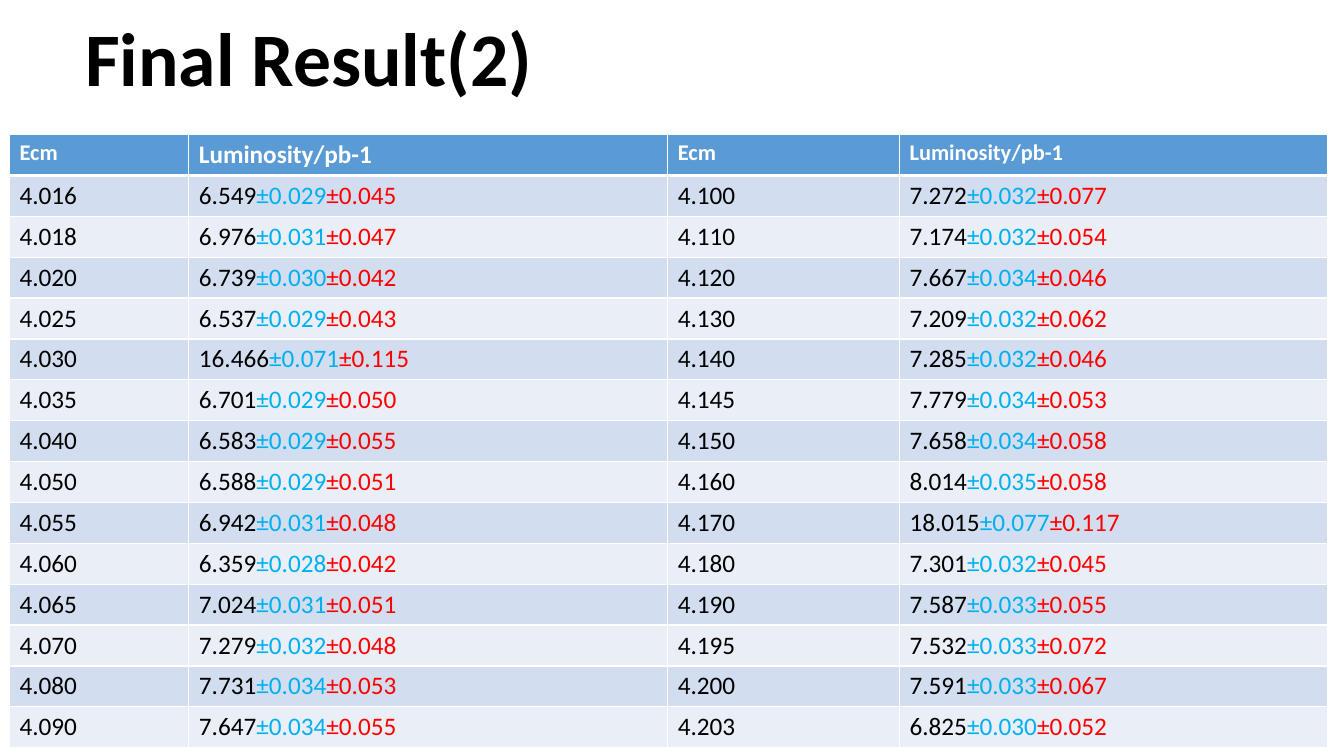
from lxml import etree
from pptx import Presentation
from pptx.dml.color import RGBColor
from pptx.enum.text import MSO_ANCHOR
from pptx.oxml.ns import qn
from pptx.util import Cm, Pt

MIDDLE = MSO_ANCHOR.MIDDLE

TITLE = "Final Result(2)"
HEADERS = [("Ecm", 16), ("Luminosity/pb-1", 18), ("Ecm", 16), ("Luminosity/pb-1", 16)]
LEFT_HALF = [
    ("4.016", "6.549", "±0.029", "±0.045"),
    ("4.018", "6.976", "±0.031", "±0.047"),
    ("4.020", "6.739", "±0.030", "±0.042"),
    ("4.025", "6.537", "±0.029", "±0.043"),
    ("4.030", "16.466", "±0.071", "±0.115"),
    ("4.035", "6.701", "±0.029", "±0.050"),
    ("4.040", "6.583", "±0.029", "±0.055"),
    ("4.050", "6.588", "±0.029", "±0.051"),
    ("4.055", "6.942", "±0.031", "±0.048"),
    ("4.060", "6.359", "±0.028", "±0.042"),
    ("4.065", "7.024", "±0.031", "±0.051"),
    ("4.070", "7.279", "±0.032", "±0.048"),
    ("4.080", "7.731", "±0.034", "±0.053"),
    ("4.090", "7.647", "±0.034", "±0.055"),
]
RIGHT_HALF = [
    ("4.100", "7.272", "±0.032", "±0.077"),
    ("4.110", "7.174", "±0.032", "±0.054"),
    ("4.120", "7.667", "±0.034", "±0.046"),
    ("4.130", "7.209", "±0.032", "±0.062"),
    ("4.140", "7.285", "±0.032", "±0.046"),
    ("4.145", "7.779", "±0.034", "±0.053"),
    ("4.150", "7.658", "±0.034", "±0.058"),
    ("4.160", "8.014", "±0.035", "±0.058"),
    ("4.170", "18.015", "±0.077", "±0.117"),
    ("4.180", "7.301", "±0.032", "±0.045"),
    ("4.190", "7.587", "±0.033", "±0.055"),
    ("4.195", "7.532", "±0.033", "±0.072"),
    ("4.200", "7.591", "±0.033", "±0.067"),
    ("4.203", "6.825", "±0.030", "±0.052"),
]
COLUMN_WIDTHS = [4.52, 12.07, 5.84, 10.8]
ROW_HEIGHT = 1.03
BLACK, WHITE, CYAN, RED = "000000", "FFFFFF", "00B0F0", "FF0000"
HEADER_FILL = "5B9BD5"
BAND_FILLS = ["D2DEEF", "EAEFF7"]


def color(hex_string):
    return RGBColor.from_string(hex_string)


def write(para, parts, size, bold=False):
    for text, hex_string in parts:
        span = para.add_run()
        span.text = text
        span.font.name = "Calibri"
        span.font.size = Pt(size)
        span.font.bold = bold
        span.font.color.rgb = color(hex_string)


def style_cell(cell, fill, top, bottom):
    properties = cell._tc.get_or_add_tcPr()
    for side, points in (("L", 1), ("R", 1), ("T", top), ("B", bottom)):
        line = etree.SubElement(properties, qn(f"a:ln{side}"), w=str(Pt(points)))
        solid = etree.SubElement(line, qn("a:solidFill"))
        etree.SubElement(solid, qn("a:srgbClr"), val=WHITE)
    cell.fill.solid()
    cell.fill.fore_color.rgb = color(fill)


def add_title(page):
    box = page.shapes.add_textbox(Cm(1.9), Cm(0.18), Cm(29.21), Cm(2.79))
    frame = box.text_frame
    frame.word_wrap = True
    frame.vertical_anchor = MIDDLE
    para = frame.paragraphs[0]
    para.line_spacing = 0.9
    write(para, [(TITLE, BLACK)], 54, bold=True)


def add_results(page):
    row_count = len(LEFT_HALF) + 1
    table = page.shapes.add_table(
        row_count, len(HEADERS), Cm(0.24), Cm(3.39),
        Cm(sum(COLUMN_WIDTHS)), Cm(ROW_HEIGHT * row_count)).table
    for column, width in zip(table.columns, COLUMN_WIDTHS):
        column.width = Cm(width)
    for row in table.rows:
        row.height = Cm(ROW_HEIGHT)

    for cell, (label, size) in zip(table.rows[0].cells, HEADERS):
        style_cell(cell, HEADER_FILL, 1, 3)
        write(cell.text_frame.paragraphs[0], [(label, WHITE)], size, bold=True)

    for index, halves in enumerate(zip(LEFT_HALF, RIGHT_HALF)):
        contents = []
        for energy, *luminosity in halves:
            contents.append([(energy, BLACK)])
            contents.append(list(zip(luminosity, (BLACK, CYAN, RED))))
        for cell, parts in zip(table.rows[index + 1].cells, contents):
            style_cell(cell, BAND_FILLS[index % 2], 3 if index == 0 else 1, 1)
            write(cell.text_frame.paragraphs[0], parts, 18)


def main():
    """Build the slide with the luminosity table."""
    deck = Presentation()
    deck.slide_width, deck.slide_height = Cm(33.87), Cm(19.05)
    page = deck.slides.add_slide(deck.slide_layouts[6])
    add_title(page)
    add_results(page)
    deck.save("out.pptx")


if __name__ == "__main__":
    main()
